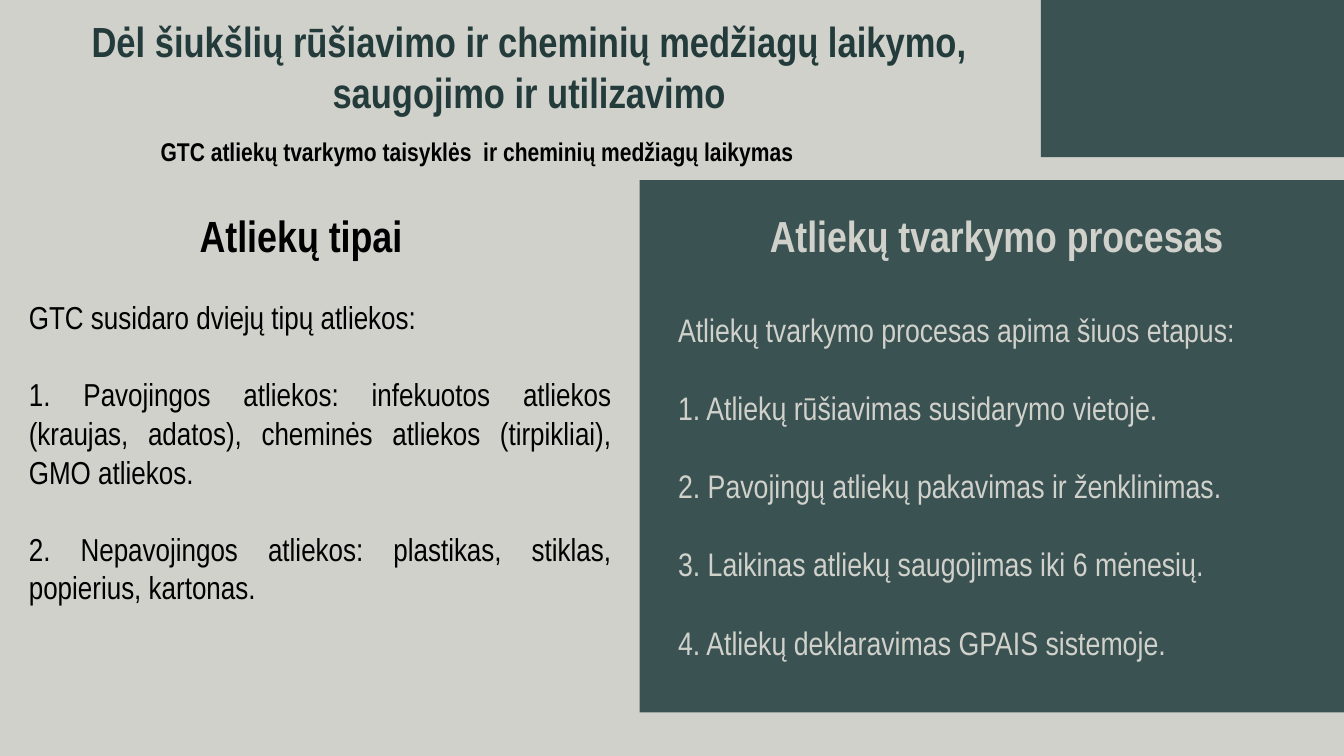
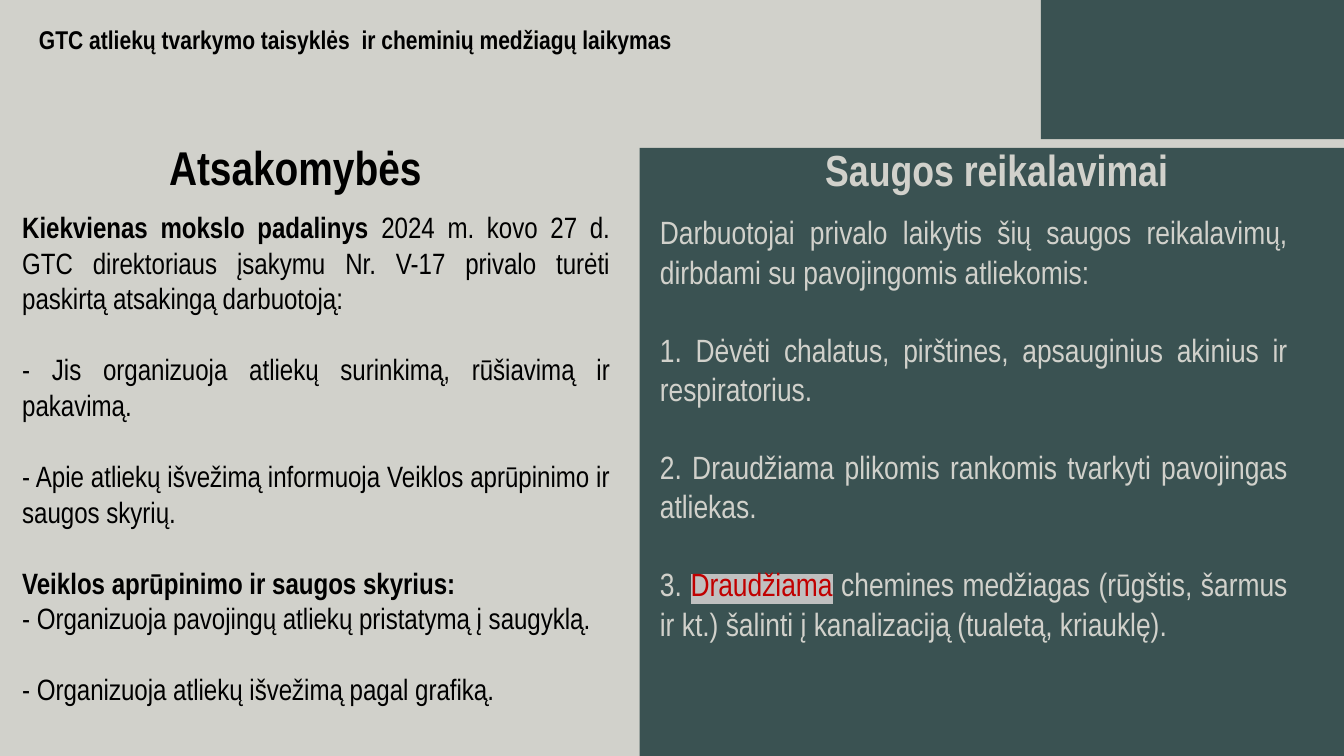
from lxml.etree import SubElement
from pptx import Presentation
from pptx.dml.color import RGBColor
from pptx.enum.shapes import MSO_SHAPE
from pptx.enum.text import MSO_AUTO_SIZE, PP_ALIGN
from pptx.oxml.ns import qn
from pptx.util import Inches, Pt

FONT = "Arial Narrow"
STONE, PINE, TITLE = "D1D1CB", "3A5252", "243B3B"
BLACK, RED, SILVER = "000000", "C00000", "C0C0C0"
SLIDE_W, SLIDE_H = 20, 11.25
CORNER_X, SPLIT_X = 15.49, 9.52
SUBTITLE = "GTC atliekų tvarkymo taisyklės  ir cheminių medžiagų laikymas"


def rgb(value):
    return RGBColor.from_string(value)


def add_slide(prs):
    s = prs.slides.add_slide(prs.slide_layouts[6])
    s.background.fill.solid()
    s.background.fill.fore_color.rgb = rgb(STONE)
    return s


def add_block(s, left, top, width, height):
    sp = s.shapes.add_shape(MSO_SHAPE.RECTANGLE, Inches(left), Inches(top),
                            Inches(width), Inches(height))
    sp.shadow.inherit = False
    sp.fill.solid()
    sp.fill.fore_color.rgb = rgb(PINE)
    sp.line.fill.background()


def add_run(p, text, size, color, bold=False, highlight=None):
    r = p.add_run()
    r.text = text
    r.font.size, r.font.bold = Pt(size), bold
    r.font.color.rgb = rgb(color)
    if highlight:  # must stand between the fill and the typeface
        mark = SubElement(r.font._element, qn("a:highlight"))
        SubElement(mark, qn("a:srgbClr")).set("val", highlight)
    r.font.name = FONT


def add_text(s, box, groups, size, leading, color, bold=False,
             align=PP_ALIGN.JUSTIFY):
    """Groups stand one line apart; a group is a list of lines, and a line is
    a string or a list of (text, run style) pairs."""
    sp = s.shapes.add_textbox(*map(Inches, box))
    tf = sp.text_frame
    tf.word_wrap = True
    tf.auto_size = MSO_AUTO_SIZE.SHAPE_TO_FIT_TEXT
    tf.margin_left = tf.margin_right = tf.margin_top = tf.margin_bottom = 0
    for g, lines in enumerate(groups):
        for i, line in enumerate(lines):
            first = g == 0 and i == 0
            p = tf.paragraphs[0] if first else tf.add_paragraph()
            p.alignment = align
            p.line_spacing = Pt(leading)
            p.space_before = Pt(leading if g and i == 0 else 0)
            for text, style in [(line, {})] if isinstance(line, str) else line:
                add_run(p, text, **{"size": size, "color": color,
                                    "bold": bold, **style})


def add_header(s, corner_height, subtitle_x, subtitle_y, title=None):
    """Top band: corner block, optional title, and subtitle."""
    add_block(s, CORNER_X, 0, SLIDE_W - CORNER_X, corner_height)
    if title:
        add_text(s, (0.72, 0.23, 14.31, 1.64), [[title]], 45.1, 54.2, TITLE,
                 bold=True, align=PP_ALIGN.CENTER)
    add_text(s, (subtitle_x, subtitle_y, 14.91, 0.46), [[SUBTITLE]],
             27.5, 33.1, BLACK, bold=True)


def add_column(s, origin, color, heading, heading_box, heading_type,
               body, body_box, body_type):
    """Heading over body; boxes are relative to the column's origin."""
    x, y = origin

    def place(box):
        return (x + box[0], y + box[1], *box[2:])

    add_text(s, place(heading_box), [[heading]], *heading_type, color,
             bold=True, align=PP_ALIGN.CENTER)
    add_text(s, place(body_box), body, *body_type, color)


def add_panel(s, top, height, heading, heading_y, body, body_box, body_size):
    """Dark right-hand panel with its column."""
    add_block(s, SPLIT_X, top, SLIDE_W - SPLIT_X, height)
    add_column(s, (SPLIT_X, top), STONE,
               heading, (0.48, heading_y, 9.66, 0.92), (46.6, 55.9),
               body, body_box, (body_size, 41.9))


def waste_slide(prs):
    s = add_slide(prs)
    add_header(s, 2.34, 2.39, 2.02,
               "Dėl šiukšlių rūšiavimo ir cheminių medžiagų laikymo, "
               "saugojimo ir utilizavimo")
    types = [
        ["GTC susidaro dviejų tipų atliekos:"],
        ["1. Pavojingos atliekos: infekuotos atliekos (kraujas, adatos), "
         "cheminės atliekos (tirpikliai), GMO atliekos."],
        ["2. Nepavojingos atliekos: plastikas, stiklas, popierius, kartonas."],
    ]
    add_column(s, (0, 2.68), BLACK,
               "Atliekų tipai", (2.39, 0.43, 4.18, 0.92), (46.8, 56.2),
               types, (0.43, 1.75, 8.67, 4.6), (34, 41.3))
    steps = [
        ["Atliekų tvarkymo procesas apima šiuos etapus:"],
        ["1. Atliekų rūšiavimas susidarymo vietoje."],
        ["2. Pavojingų atliekų pakavimas ir ženklinimas."],
        ["3. Laikinas atliekų saugojimas iki 6 mėnesių."],
        ["4. Atliekų deklaravimas GPAIS sistemoje."],
    ]
    add_panel(s, 2.68, 7.92, "Atliekų tvarkymo procesas", 0.43,
              steps, (0.57, 1.93, 9.34, 5.83), 34.9)


def duties_slide(prs):
    s = add_slide(prs)
    add_header(s, 2.07, 0.58, 0.36)
    strong = {"bold": True}
    duties = [
        [[("Kiekvienas mokslo padalinys", strong),
          (" 2024 m. kovo 27 d. GTC direktoriaus įsakymu Nr. V-17 privalo "
           "turėti paskirtą atsakingą darbuotoją:", {})]],
        ["- Jis organizuoja atliekų surinkimą, rūšiavimą ir pakavimą."],
        ["- Apie atliekų išvežimą informuoja Veiklos aprūpinimo ir saugos "
         "skyrių."],
        [[("Veiklos aprūpinimo ir saugos skyrius:", strong)],
         "- Organizuoja pavojingų atliekų pristatymą į saugyklą."],
        ["- Organizuoja atliekų išvežimą pagal grafiką."],
    ]
    add_column(s, (0, 2.05), BLACK,
               "Atsakomybės", (2.13, 0, 4.53, 1), (50.8, 60.9),
               duties, (0.33, 1.06, 8.75, 7.93), (31.5, 38.1))
    rules = [
        ["Darbuotojai privalo laikytis šių saugos reikalavimų, dirbdami su "
         "pavojingomis atliekomis:"],
        ["1. Dėvėti chalatus, pirštines, apsauginius akinius ir "
         "respiratorius."],
        ["2. Draudžiama plikomis rankomis tvarkyti pavojingas atliekas."],
        [[("3. ", {}),
          ("Draudžiama", {"color": RED, "highlight": SILVER}),
          (" chemines medžiagas (rūgštis, šarmus ir kt.) šalinti į "
           "kanalizaciją (tualetą, kriauklę).", {})]],
    ]
    add_panel(s, 2.2, SLIDE_H - 2.2, "Saugos reikalavimai", -0.07,
              rules, (0.3, 0.96, 9.34, 7.64), 34.5)


def main():
    prs = Presentation()
    prs.slide_width, prs.slide_height = Inches(SLIDE_W), Inches(SLIDE_H)
    waste_slide(prs)
    duties_slide(prs)
    prs.save("out.pptx")


if __name__ == "__main__":
    main()
